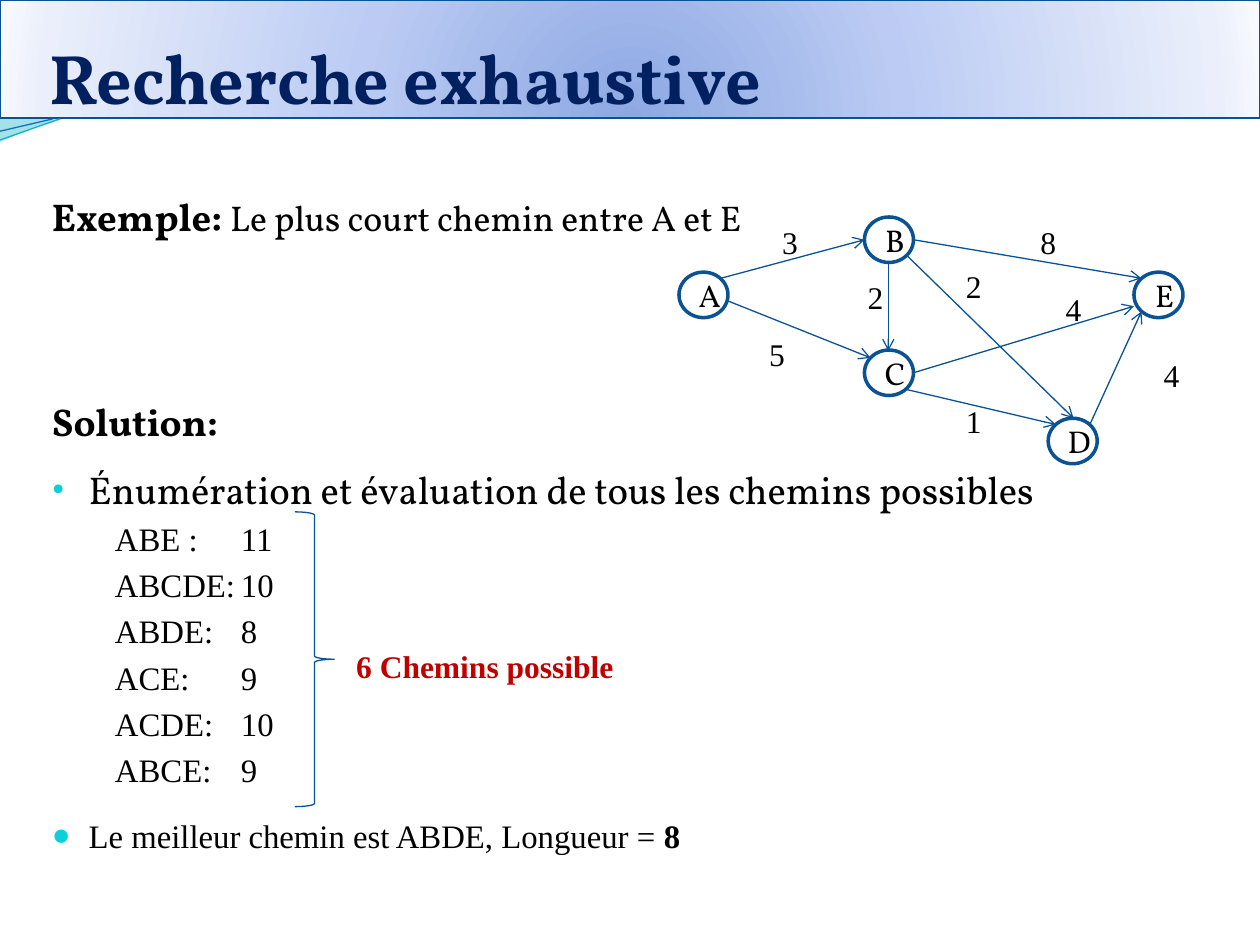
"""Builds the slide on exhaustive search for the shortest path."""
from dataclasses import dataclass

import pptx
import pptx.dml.color
import pptx.enum.shapes
import pptx.enum.text
import pptx.oxml
import pptx.oxml.ns
import pptx.util

Pt = pptx.util.Pt
Color = pptx.dml.color.RGBColor
BLACK = Color(0x00, 0x00, 0x00)
NAVY = Color(0x00, 0x20, 0x60)
RED = Color(0xC0, 0x00, 0x00)
EDGE_BLUE = Color(0x09, 0x52, 0x95)
NODE_BLUE = Color(0x0B, 0x52, 0x92)
BULLET_CYAN = Color(0x0B, 0xD0, 0xD9)
WAVE_PALE = Color(0xA4, 0xE2, 0xE8)
WAVE_TEAL = Color(0x0A, 0xB8, 0xBF)
WAVE_BLUE = Color(0x0F, 0x6F, 0xC6)
BANNER_STOPS = ((0, Color(0x8D, 0xA8, 0xE3)), (43, Color(0xBB, 0xCB, 0xF3)),
                (93, Color(0xEA, 0xEF, 0xFB)), (100, Color(0xF7, 0xF9, 0xFF)))
SERIF = "Times New Roman"
DISPLAY = "Vollkorn"
NS = pptx.oxml.ns.nsdecls("a")
CENTER = pptx.enum.text.PP_ALIGN.CENTER
MIDDLE = pptx.enum.text.MSO_ANCHOR.MIDDLE


@dataclass(frozen=True)
class Node:
    name: str
    left: float
    top: float


@dataclass(frozen=True)
class Edge:
    start: tuple[float, float]
    end: tuple[float, float]
    weight: str
    weight_at: tuple[float, float]


@dataclass(frozen=True)
class Line:
    phrases: tuple[tuple[str, float, bool], ...]
    font: str
    height: float
    before: float
    bullet: str = ""
    tabs: tuple[float, ...] = ()


NODES = (Node("A", 388, 155.5), Node("B", 494, 124), Node("C", 494, 200),
         Node("E", 648, 155.5), Node("D", 599, 239))
EDGES = (
    Edge((412, 159), (494, 137), "3", (423.4, 124)),
    Edge((416, 172), (497.5, 204.5), "5", (416, 188)),
    Edge((517.7, 145.5), (613.5, 239), "2", (528.5, 149)),
    Edge((507.6, 149), (507.6, 200.5), "2", (472.3, 155.5)),
    Edge((522, 137), (652.3, 159), "8", (571, 124)),
    Edge((517.7, 222.5), (603.4, 242.6), "1", (528.5, 226)),
    Edge((622.8, 242.6), (652.3, 178), "4", (641.5, 200)),
    Edge((522, 213), (648, 175), "4", (585.4, 162)),
)
PATHS = (("ABE :", 11), ("ABCDE:", 10), ("ABDE:", 8), ("ACE:", 9), ("ACDE:", 10), ("ABCE:", 9))
LINES = (
    Line((("Exemple: ", 22.1, True), ("Le plus court chemin entre A et E", 20.4, False)),
         DISPLAY, 31.5, 0),
    Line((("Solution:", 22.1, True),), DISPLAY, 31.5, 85.5),
    Line((("Énumération et évaluation de tous les chemins possibles", 22.1, False),),
         DISPLAY, 31.5, 7.4, "•"),
    *(Line(((f"\t{route}\t{length}", 18.7, False),), SERIF, 22, 4.4, tabs=(35, 119))
      for route, length in PATHS),
    Line((("Le meilleur chemin est ABDE, Longueur = ", 18.7, False), ("8", 18.7, True)),
         SERIF, 22, 15.7, "●"),
)


def write(paragraph, text: str, *, font: str = SERIF, size: float = 18,
          bold: bool = False, color: Color = BLACK) -> None:
    run = paragraph.add_run()
    run.text = text
    run.font.name = font
    run.font.size = Pt(size)
    run.font.bold = bold
    run.font.color.rgb = color


def place(shape, left: float, top: float, width: float, height: float) -> None:
    shape.left, shape.top = Pt(left), Pt(top)
    shape.width, shape.height = Pt(width), Pt(height)


def outline(shape, color: Color, width: float) -> None:
    shape.line.color.rgb = color
    shape.line.width = Pt(width)


def draw_line(slide, start: tuple[float, float], end: tuple[float, float],
              color: Color, arrow: bool = False) -> None:
    connector = slide.shapes.add_connector(
        pptx.enum.shapes.MSO_CONNECTOR.STRAIGHT, *map(Pt, start + end))
    outline(connector, color, 0.75)
    properties = connector.element.spPr
    if arrow:
        properties.find(pptx.oxml.ns.qn("a:ln")).append(
            pptx.oxml.parse_xml(f'<a:tailEnd {NS} type="arrow"/>'))
    properties.append(pptx.oxml.parse_xml(f"<a:effectLst {NS}/>"))


def draw_wave(slide) -> None:
    builder = slide.shapes.build_freeform(0, 68, scale=Pt(1))
    builder.add_line_segments(((36, 68), (17, 74), (0, 81)))
    corner = builder.convert_to_shape()
    corner.shadow.inherit = False
    corner.fill.solid()
    corner.fill.fore_color.rgb = WAVE_PALE
    corner.line.fill.background()
    draw_line(slide, (0, 80), (34, 68), WAVE_TEAL)
    draw_line(slide, (0, 75), (30, 68), WAVE_BLUE)


def fill_title(title) -> None:
    place(title, 0, 0, 720, 67.5)
    title.fill.solid()
    stops = "".join(f'<a:gs pos="{pos * 1000}"><a:srgbClr val="{color}"/></a:gs>'
                    for pos, color in BANNER_STOPS)
    gradient = pptx.oxml.parse_xml(
        f'<a:gradFill {NS} rotWithShape="1"><a:gsLst>{stops}</a:gsLst><a:path path="circle">'
        '<a:fillToRect l="50000" t="130000" r="50000" b="-30000"/></a:path></a:gradFill>')
    properties = title.element.spPr
    properties.replace(properties.find(pptx.oxml.ns.qn("a:solidFill")), gradient)
    outline(title, EDGE_BLUE, 0.75)
    frame = title.text_frame
    frame.auto_size = pptx.enum.text.MSO_AUTO_SIZE.NONE
    frame.vertical_anchor = pptx.enum.text.MSO_ANCHOR.BOTTOM
    frame.margin_left, frame.margin_top = Pt(28), Pt(3.6)
    frame.margin_right = frame.margin_bottom = 0
    heading = frame.paragraphs[0]
    heading.alignment = pptx.enum.text.PP_ALIGN.LEFT
    write(heading, "Recherche exhaustive", font=DISPLAY, size=40, bold=True, color=NAVY)


def format_line(paragraph, line: Line) -> None:
    paragraph.line_spacing = Pt(line.height)
    paragraph.space_before = Pt(line.before)
    paragraph.space_after = Pt(0)
    properties = paragraph._p.get_or_add_pPr()
    indent = Pt(21) if line.bullet else 0
    properties.set("marL", str(indent))
    properties.set("indent", str(-indent))
    marks = [f"<a:buNone {NS}/>"]
    if line.bullet:
        marks = [f'<a:buClr {NS}><a:srgbClr val="{BULLET_CYAN}"/></a:buClr>',
                 f'<a:buSzPct {NS} val="95000"/>',
                 f'<a:buFont {NS} typeface="{SERIF}"/>',
                 f'<a:buChar {NS} char="{line.bullet}"/>']
    if line.tabs:
        stops = "".join(f'<a:tab pos="{Pt(stop)}" algn="l"/>' for stop in line.tabs)
        marks.append(f"<a:tabLst {NS}>{stops}</a:tabLst>")
    for mark in marks:
        properties.append(pptx.oxml.parse_xml(mark))


def fill_body(body) -> None:
    place(body, 22.5, 101.5, 648, 399.5)
    frame = body.text_frame
    frame.auto_size = pptx.enum.text.MSO_AUTO_SIZE.NONE
    for index, line in enumerate(LINES):
        paragraph = frame.add_paragraph() if index else frame.paragraphs[0]
        format_line(paragraph, line)
        for text, size, bold in line.phrases:
            write(paragraph, text, font=line.font, size=size, bold=bold)


def draw_node(slide, node: Node) -> None:
    circle = slide.shapes.add_shape(pptx.enum.shapes.MSO_SHAPE.OVAL,
                                    Pt(node.left), Pt(node.top), Pt(28), Pt(26))
    circle.shadow.inherit = False
    circle.fill.background()
    outline(circle, NODE_BLUE, 2)
    frame = circle.text_frame
    frame.vertical_anchor = MIDDLE
    frame.margin_left = Pt(7)
    frame.margin_top = frame.margin_right = frame.margin_bottom = 0
    frame.paragraphs[0].alignment = CENTER
    write(frame.paragraphs[0], node.name, font=DISPLAY)


def draw_edge(slide, edge: Edge) -> None:
    draw_line(slide, edge.start, edge.end, EDGE_BLUE, arrow=True)
    frame = slide.shapes.add_textbox(*map(Pt, edge.weight_at), Pt(56), Pt(33)).text_frame
    frame.word_wrap = True
    frame.paragraphs[0].alignment = CENTER
    write(frame.paragraphs[0], edge.weight)


def draw_path_count(slide) -> None:
    brace = slide.shapes.add_shape(pptx.enum.shapes.MSO_SHAPE.RIGHT_BRACE,
                                   Pt(168.5), Pt(292.5), Pt(22.5), Pt(168.5))
    brace.shadow.inherit = False
    brace.fill.background()
    outline(brace, EDGE_BLUE, 0.75)
    count = slide.shapes.add_textbox(Pt(196.5), Pt(366), Pt(163), Pt(29)).text_frame
    write(count.paragraphs[0], "6 Chemins possible", bold=True, color=RED)


def main() -> None:
    deck = pptx.Presentation()
    deck.slide_width, deck.slide_height = Pt(720), Pt(540)
    slide = deck.slides.add_slide(deck.slide_layouts[1])
    draw_wave(slide)
    fill_title(slide.shapes.title)
    fill_body(slide.placeholders[1])
    for node in NODES:
        draw_node(slide, node)
    for edge in EDGES:
        draw_edge(slide, edge)
    draw_path_count(slide)
    deck.save("out.pptx")


if __name__ == "__main__":
    main()
